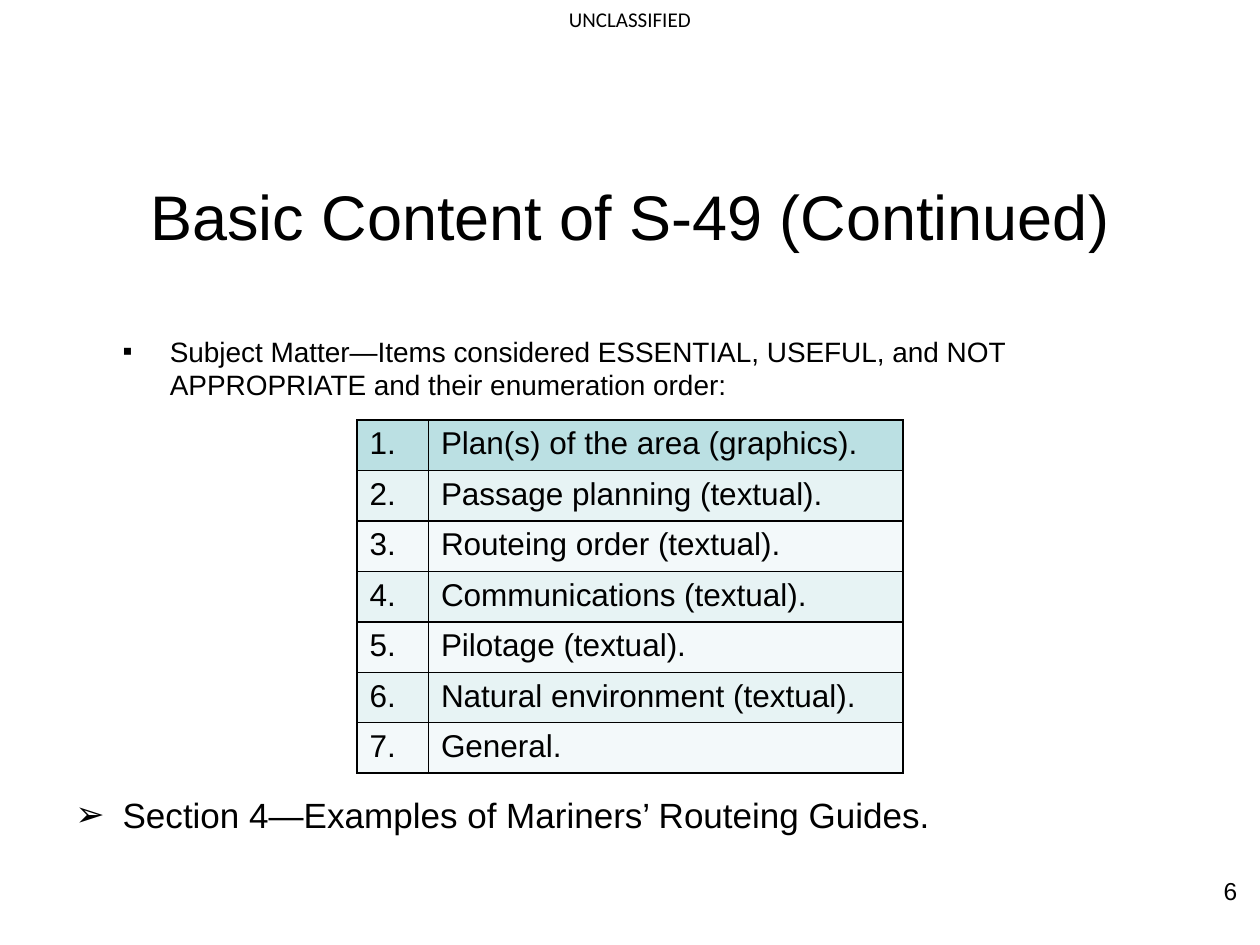
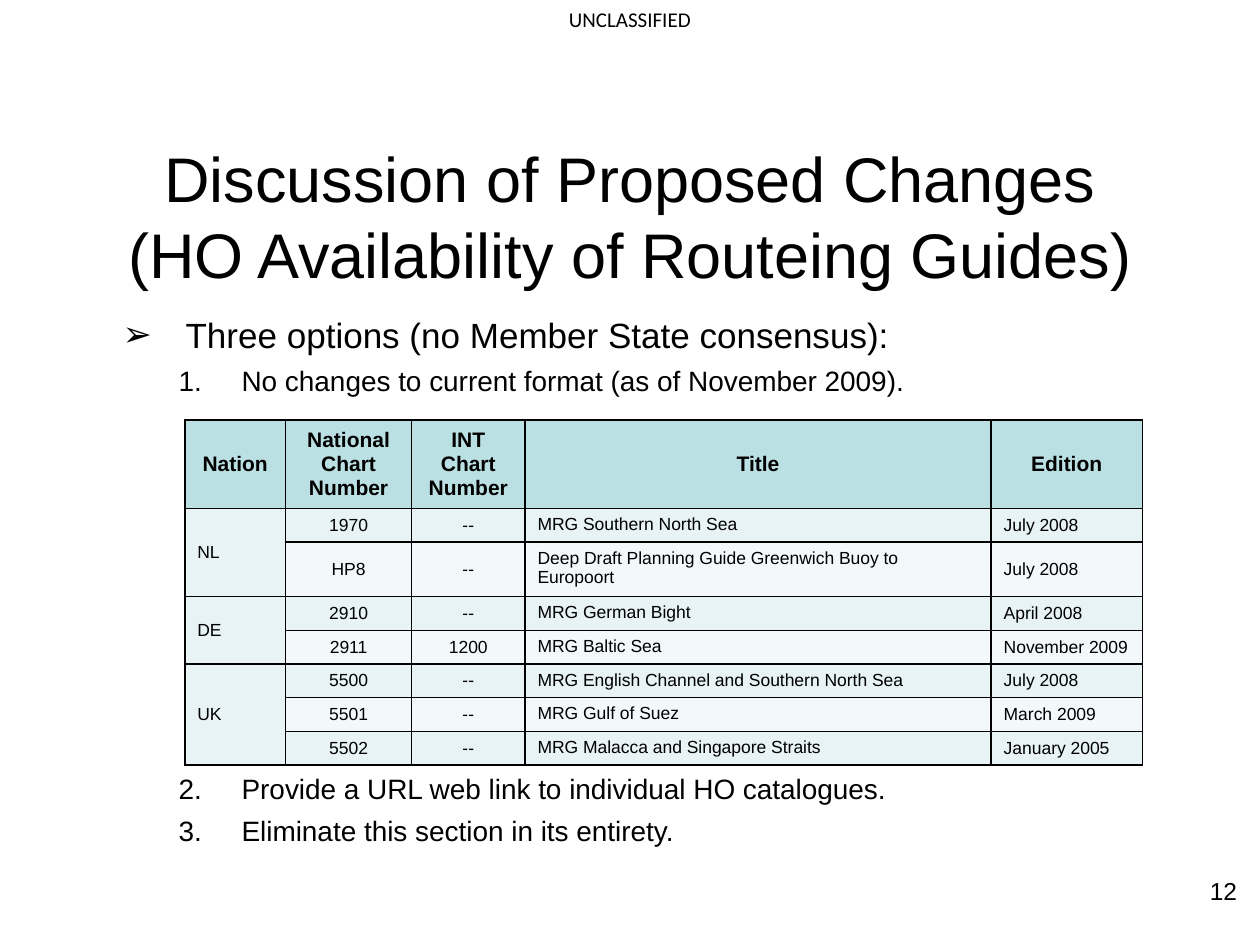
from dataclasses import dataclass

from lxml import etree
from pptx import Presentation
from pptx.dml.color import RGBColor
from pptx.enum.text import MSO_ANCHOR, MSO_AUTO_SIZE, PP_ALIGN
from pptx.oxml.ns import qn
from pptx.util import Pt

LEFT, MID, RIGHT = PP_ALIGN.LEFT, PP_ALIGN.CENTER, PP_ALIGN.RIGHT
TOP, CENTER = MSO_ANCHOR.TOP, MSO_ANCHOR.MIDDLE
NO_FIT = MSO_AUTO_SIZE.NONE

BLACK = "000000"
HEAD, ODD, EVEN = "BBE0E3", "E7F3F4", "F3F9FA"
SANS, MARK = "Arial", "Calibri"


@dataclass
class Item:
    text: str
    size: float
    bullet: str
    left: float
    hang: float
    start: int = 0


@dataclass
class Col:
    width: float
    align: int = LEFT
    anchor: int = CENTER


@dataclass
class Grid:
    left: float
    top: float
    cols: list[Col]
    rows: list[tuple[str, ...]]
    highs: list[float]
    size: float
    header: bool = False


def color(code: str) -> RGBColor:
    return RGBColor.from_string(code)


def write(para, text: str, size: float, font: str = SANS, bold: bool = False) -> None:
    for i, line in enumerate(text.split("\n")):
        if i:
            para.add_line_break()
        run = para.add_run()
        run.text = line
        run.font.name = font
        run.font.size = Pt(size)
        run.font.bold = bold
        run.font.color.rgb = color(BLACK)


def add_box(slide, left: float, top: float, width: float, height: float):
    shape = slide.shapes.add_textbox(Pt(left), Pt(top), Pt(width), Pt(height))
    shape.text_frame.word_wrap = True
    return shape.text_frame


def add_page(deck, title: str, number: str):
    slide = deck.slides.add_slide(deck.slide_layouts[5])
    head = slide.shapes.title
    head.left, head.top, head.width, head.height = Pt(36), Pt(78), Pt(648), Pt(90)
    frame = head.text_frame
    frame.word_wrap = True
    frame.auto_size = NO_FIT
    frame.vertical_anchor = CENTER
    para = frame.paragraphs[0]
    para.alignment = MID
    write(para, title, 36)

    para = add_box(slide, 0, 0, 720, 21.6).paragraphs[0]
    para.alignment = MID
    write(para, "UNCLASSIFIED", 12, MARK)

    para = add_box(slide, 546, 496.8, 168, 37.5).paragraphs[0]
    para.alignment = RIGHT
    write(para, number, 14)
    return slide


def add_list(slide, top: float, height: float, items: list[Item]) -> None:
    frame = add_box(slide, 36, top, 648, height)
    for i, item in enumerate(items):
        para = frame.add_paragraph() if i else frame.paragraphs[0]
        props = para._p.get_or_add_pPr()
        props.set("marL", str(Pt(item.left)))
        props.set("indent", str(-Pt(item.hang)))
        etree.SubElement(props, qn("a:buFont")).set("typeface", SANS)
        if item.start:
            auto = etree.SubElement(props, qn("a:buAutoNum"))
            auto.set("type", item.bullet)
            auto.set("startAt", str(item.start))
        else:
            etree.SubElement(props, qn("a:buChar")).set("char", item.bullet)
        if i:
            para.space_before = Pt(4.5)
        write(para, item.text, item.size)


def add_edges(cell) -> None:
    props = cell._tc.get_or_add_tcPr()
    for side in ("a:lnL", "a:lnR", "a:lnT", "a:lnB"):
        line = etree.SubElement(props, qn(side))
        line.set("w", str(Pt(1)))
        fill = etree.SubElement(line, qn("a:solidFill"))
        etree.SubElement(fill, qn("a:srgbClr")).set("val", BLACK)


def add_grid(slide, grid: Grid):
    wide = sum(col.width for col in grid.cols)
    table = slide.shapes.add_table(
        len(grid.rows), len(grid.cols),
        Pt(grid.left), Pt(grid.top), Pt(wide), Pt(sum(grid.highs)),
    ).table
    for c, col in enumerate(grid.cols):
        table.columns[c].width = Pt(col.width)
    for r, row in enumerate(grid.rows):
        table.rows[r].height = Pt(grid.highs[r])
        top = grid.header and r == 0
        for c, (col, text) in enumerate(zip(grid.cols, row)):
            cell = table.cell(r, c)
            add_edges(cell)
            cell.fill.solid()
            cell.fill.fore_color.rgb = color(HEAD if r == 0 else ODD if r % 2 else EVEN)
            cell.vertical_anchor = CENTER if top else col.anchor
            if text:
                para = cell.text_frame.paragraphs[0]
                para.alignment = MID if top else col.align
                write(para, text, 12 if top else grid.size, bold=top)
    return table


def add_content(deck) -> None:
    slide = add_page(deck, "Basic Content of S-49 (Continued)", "6")
    add_list(slide, 187.5, 46, [
        Item("Subject Matter—Items considered ESSENTIAL, USEFUL, and NOT "
             "APPROPRIATE and their enumeration order:", 16, "▪", 54, 27),
    ])
    topics = [
        "Plan(s) of the area (graphics).",
        "Passage planning (textual).",
        "Routeing order (textual).",
        "Communications (textual).",
        "Pilotage (textual).",
        "Natural environment (textual).",
        "General.",
    ]
    rows = [(f"{i}.", topic) for i, topic in enumerate(topics, 1)]
    cols = [Col(40.8, anchor=TOP), Col(271.2, anchor=TOP)]
    add_grid(slide, Grid(204, 240, cols, rows, [27.4] * len(rows), 18))
    add_list(slide, 450, 32, [
        Item("Section 4—Examples of Mariners’ Routeing Guides.", 20, "➢", 27, 27),
    ])


def add_options(deck) -> None:
    slide = add_page(
        deck, "Discussion of Proposed Changes\n(HO Availability of Routeing Guides)", "12")

    def option(text: str, start: int) -> Item:
        return Item(text, 16, "arabicPeriod", 95, 36, start)

    add_list(slide, 175.8, 54, [
        Item("Three options (no Member State consensus):", 20, "➢", 63, 36),
        option("No changes to current format (as of November 2009).", 1),
    ])
    cols = [Col(57.6), Col(72, MID), Col(64.8, MID), Col(266.4, anchor=TOP), Col(86.4)]
    rows = [
        ("Nation", "National Chart Number", "INT Chart Number", "Title", "Edition"),
        ("NL", "1970", "--", "MRG Southern North Sea", "July 2008"),
        ("", "HP8", "--", "Deep Draft Planning Guide Greenwich Buoy to Europoort",
         "July 2008"),
        ("DE", "2910", "--", "MRG German Bight", "April 2008"),
        ("", "2911", "1200", "MRG Baltic Sea", "November 2009"),
        ("UK", "5500", "--", "MRG English Channel and Southern North Sea", "July 2008"),
        ("", "5501", "--", "MRG Gulf of Suez", "March 2009"),
        ("", "5502", "--", "MRG Malacca and Singapore Straits", "January 2005"),
    ]
    highs = [47.5, 18.4, 29.7] + [18.4] * 5
    table = add_grid(slide, Grid(105.6, 240, cols, rows, highs, 10, True))
    for first, last in ((1, 2), (3, 4), (5, 7)):
        table.cell(first, 0).merge(table.cell(last, 0))
    add_list(slide, 437.4, 52, [
        option("Provide a URL web link to individual HO catalogues.", 2),
        option("Eliminate this section in its entirety.", 3),
    ])


def main() -> None:
    deck = Presentation()
    deck.slide_width, deck.slide_height = Pt(720), Pt(540)
    add_content(deck)
    add_options(deck)
    deck.save("out.pptx")


if __name__ == "__main__":
    main()
